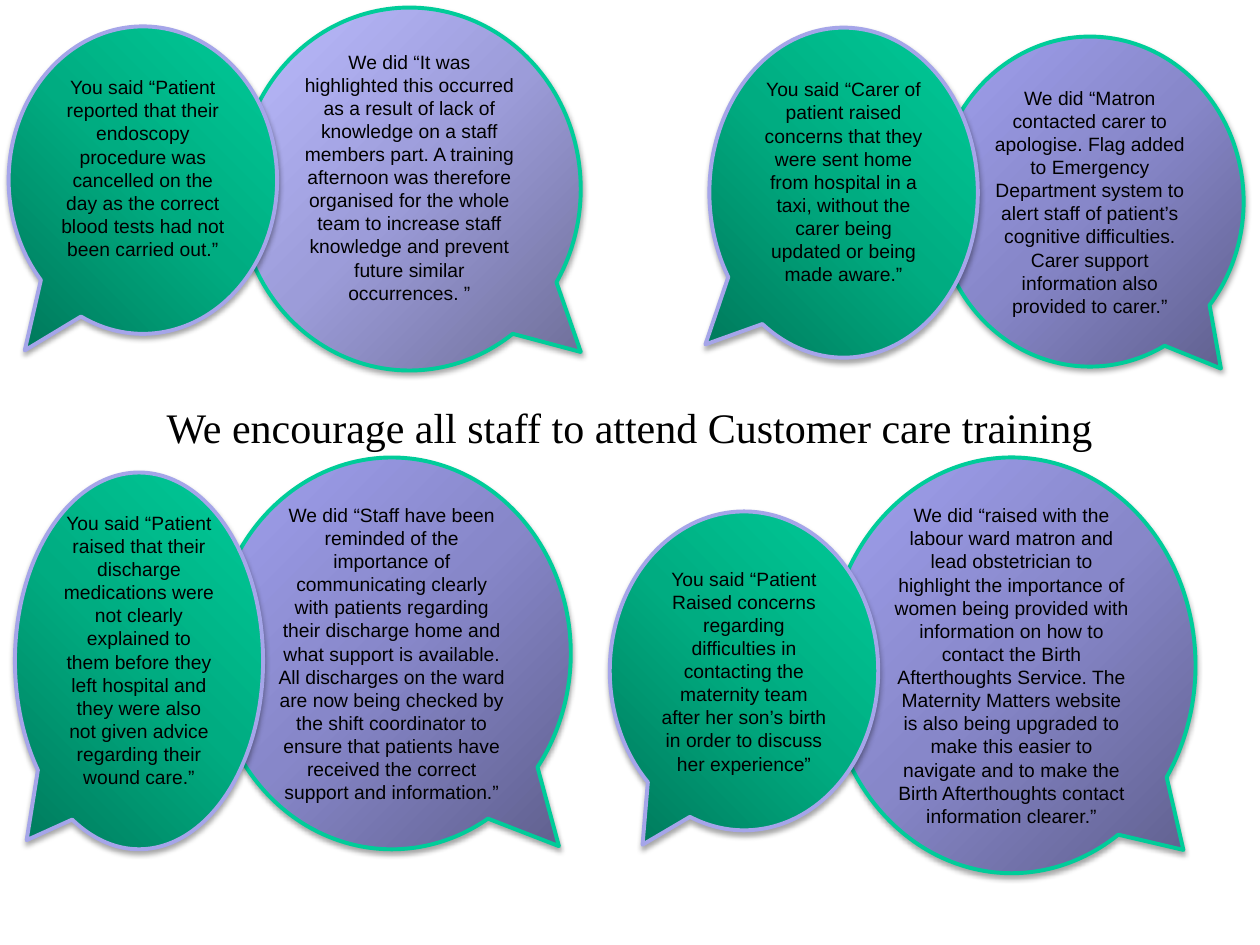
from dataclasses import dataclass

from lxml.etree import SubElement
from pptx import Presentation
from pptx.dml.color import RGBColor
from pptx.enum.shapes import MSO_SHAPE
from pptx.enum.text import MSO_ANCHOR, MSO_AUTO_SIZE, PP_ALIGN
from pptx.oxml.ns import qn
from pptx.slide import Slide
from pptx.util import Pt


@dataclass(frozen=True)
class BubbleStyle:
    stops: tuple[str, str, str]   # gradient colours, dark to light
    dark_corner: dict[str, int]   # focus rectangle, percent
    outline: str


@dataclass(frozen=True)
class Theme:
    ink: str = "000000"
    heading_font: str = "Times New Roman"
    heading_size: float = 24
    quote_font: str = "Arial"
    quote_size: float = 11
    outline_width: float = 2.25


@dataclass(frozen=True)
class Bubble:
    style: BubbleStyle
    box: tuple[float, float, float, float]  # left, top, width, height
    tip: tuple[float, float]
    text: str
    space_below: float = 0


THEME = Theme()
BOTTOM_LEFT = dict(l=0, t=100, r=100, b=0)
BOTTOM_RIGHT = dict(l=100, t=100, r=0, b=0)
SAID = BubbleStyle(("00795B", "00AC81", "00CC99"), BOTTOM_LEFT, "A5A5E9")
DID = BubbleStyle(("5F5F8D", "8787C9", "A0A0EE"), BOTTOM_RIGHT, "00CC99")
DID_LIGHT = BubbleStyle(("6E6E98", "9C9CD9", "BBBBFF"), BOTTOM_RIGHT, "00CC99")

# From back to front: each answer lies behind its comment
BUBBLES = [
    Bubble(DID, (473, 261.4, 210.2, 237.6), (0.467, 0.444),
           "We did “raised with the labour ward matron and lead obstetrician to "
           "highlight the importance of women being provided with information on "
           "how to contact the Birth Afterthoughts Service. The Maternity Matters "
           "website is also being upgraded to make this easier to navigate and to "
           "make the Birth Afterthoughts contact information clearer.”"),
    Bubble(DID, (121.7, 261.4, 204.5, 223.9), (0.467, 0.492),
           "We did “Staff have been reminded of the importance of communicating "
           "clearly with patients regarding their discharge home and what support "
           "is available. All discharges on the ward are now being checked by the "
           "shift coordinator to ensure that patients have received the correct "
           "support and information.”"),
    Bubble(SAID, (8.6, 270, 141.8, 215.3), (-0.453, 0.476),
           "You said “Patient raised that their discharge medications were not "
           "clearly explained to them before they left hospital and they were also "
           "not given advice regarding their wound care.”", 12.6),
    Bubble(DID_LIGHT, (136.1, 4.3, 195.8, 207.4), (0.5, 0.449),
           "We did “It was highlighted this occurred as a result of lack of "
           "knowledge on a staff members part. A training afternoon was therefore "
           "organised for the whole team to increase staff knowledge and prevent "
           "future similar occurrences. ”", 13.8),
    Bubble(DID, (535, 20.9, 175.7, 188.6), (0.426, 0.506),
           "We did “Matron contacted carer to apologise. Flag added to Emergency "
           "Department system to alert staff of patient’s cognitive difficulties. "
           "Carer support information also provided to carer.”"),
    Bubble(SAID, (348.5, 292.3, 153.4, 182.2), (-0.378, 0.545),
           "You said “Patient Raised concerns regarding difficulties in contacting "
           "the maternity team after her son’s birth in order to discuss her "
           "experience”"),
    Bubble(SAID, (405.4, 15.8, 153.4, 188.6), (-0.515, 0.46),
           "You said “Carer of patient raised concerns that they were sent home "
           "from hospital in a taxi, without the carer being updated or being made "
           "aware.”", 12.6),
    Bubble(SAID, (5, 15.1, 153.4, 175.7), (-0.44, 0.554),
           "You said “Patient reported that their endoscopy procedure was cancelled "
           "on the day as the correct blood tests had not been carried out.”", 13.8),
]


def write_text(shape, text: str, font: str, size: float, anchor: MSO_ANCHOR,
               space_below: float = 0) -> None:
    frame = shape.text_frame
    frame.text = text
    frame_format = dict(
        word_wrap=True, auto_size=MSO_AUTO_SIZE.NONE, vertical_anchor=anchor,
        margin_left=Pt(7.2), margin_right=Pt(7.2),
        margin_top=Pt(3.6), margin_bottom=Pt(3.6 + space_below))
    for name, value in frame_format.items():
        setattr(frame, name, value)
    line = frame.paragraphs[0]
    line.alignment = PP_ALIGN.CENTER
    for name, value in dict(name=font, size=Pt(size), bold=False).items():
        setattr(line.runs[0].font, name, value)
    line.runs[0].font.color.rgb = RGBColor.from_string(THEME.ink)


def paint_gradient(shape, style: BubbleStyle) -> None:
    """Fill with a gradient that spreads in circles from the dark corner."""
    shape.fill.gradient()
    gradient = shape._element.spPr.find(qn("a:gradFill"))
    for part in list(gradient):
        gradient.remove(part)
    stops = SubElement(gradient, qn("a:gsLst"))
    for position, colour in zip((0, 50000, 100000), style.stops):
        stop = SubElement(stops, qn("a:gs"), pos=str(position))
        SubElement(stop, qn("a:srgbClr"), val=colour)
    circle = SubElement(gradient, qn("a:path"), path="circle")
    SubElement(circle, qn("a:fillToRect"),
               {side: str(share * 1000) for side, share in style.dark_corner.items()})


def add_soft_shadow(shape) -> None:
    shape.shadow.inherit = False
    effects = shape._element.spPr.find(qn("a:effectLst"))
    shadow = SubElement(effects, qn("a:outerShdw"), blurRad=str(Pt(3.1)),
                        dist=str(Pt(1.8)), dir="5400000", rotWithShape="0")
    colour = SubElement(shadow, qn("a:srgbClr"), val=THEME.ink)
    SubElement(colour, qn("a:alpha"), val="35000")


def add_bubble(slide: Slide, bubble: Bubble) -> None:
    callout = slide.shapes.add_shape(
        MSO_SHAPE.OVAL_CALLOUT, *(Pt(length) for length in bubble.box))
    for index, offset in enumerate(bubble.tip):
        callout.adjustments[index] = offset
    paint_gradient(callout, bubble.style)
    callout.line.color.rgb = RGBColor.from_string(bubble.style.outline)
    callout.line.width = Pt(THEME.outline_width)
    add_soft_shadow(callout)
    write_text(callout, bubble.text, THEME.quote_font, THEME.quote_size,
               MSO_ANCHOR.MIDDLE, bubble.space_below)


def add_heading(slide: Slide, text: str) -> None:
    heading = slide.shapes.title
    place = dict(left=Pt(54), top=Pt(226), width=Pt(612), height=Pt(36))
    for name, value in place.items():
        setattr(heading, name, value)
    write_text(heading, text, THEME.heading_font, THEME.heading_size, MSO_ANCHOR.TOP)


def main() -> None:
    deck = Presentation()
    deck.slide_width, deck.slide_height = Pt(720), Pt(540)
    slide = deck.slides.add_slide(deck.slide_layouts[5])  # title only

    # Heading across the middle
    add_heading(slide, "We encourage all staff to attend Customer care training")

    # Pairs of comment and answer
    for bubble in BUBBLES:
        add_bubble(slide, bubble)

    deck.save("out.pptx")


if __name__ == "__main__":
    main()
